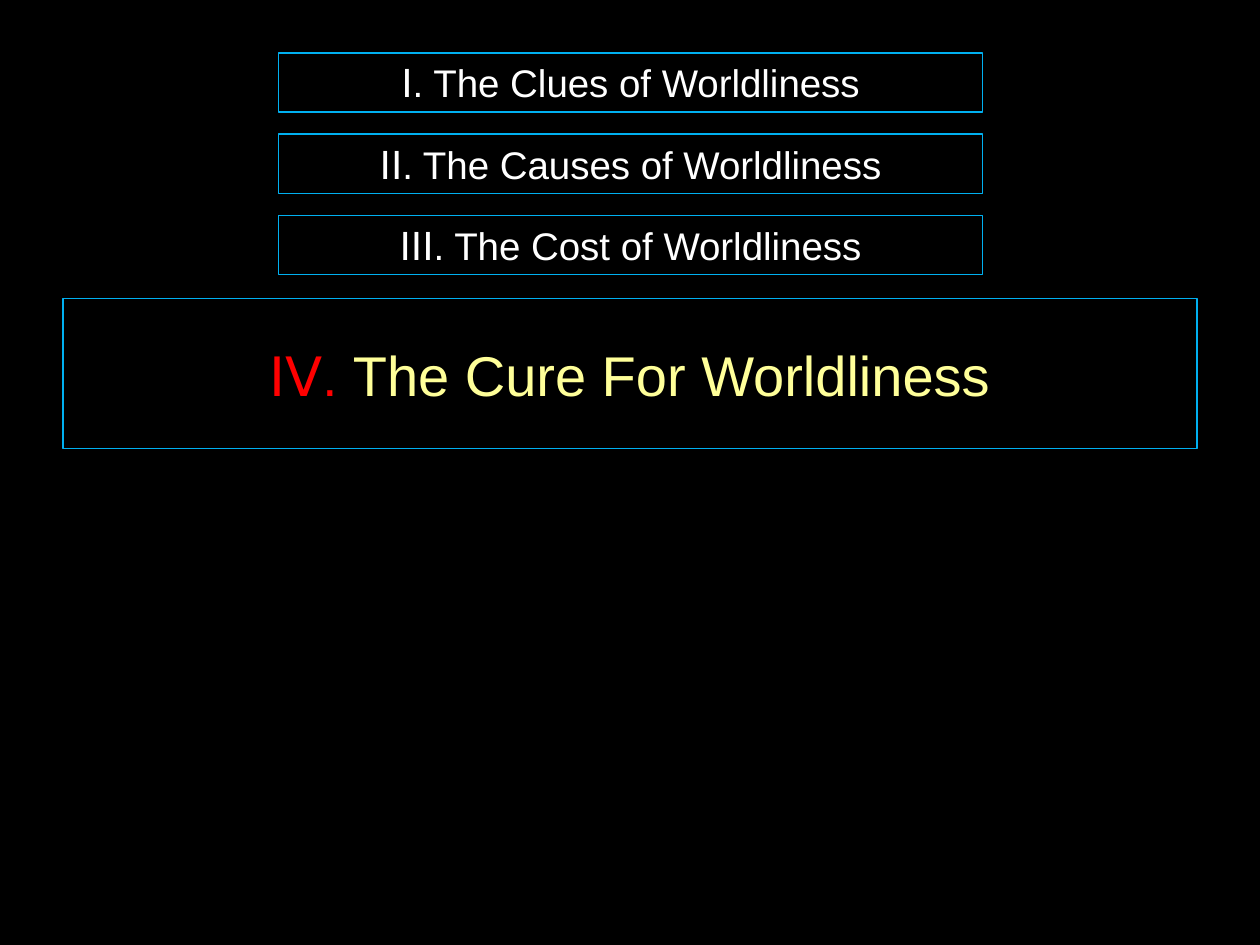
from pptx import Presentation
from pptx.dml.color import RGBColor
from pptx.enum.shapes import MSO_SHAPE
from pptx.enum.text import MSO_ANCHOR, PP_ALIGN
from pptx.util import Inches, Pt

BLACK = RGBColor(0x00, 0x00, 0x00)
WHITE = RGBColor(0xFF, 0xFF, 0xFF)
RED = RGBColor(0xFF, 0x00, 0x00)
YELLOW = RGBColor(0xFF, 0xFF, 0x99)
BLUE = RGBColor(0x00, 0xB0, 0xF0)

NUMERAL_FONT = "DejaVu Sans"
TITLE_FONT = "Arial"

EARLIER_POINTS = [
    ("I", ". The Clues of Worldliness"),
    ("II", ". The Causes of Worldliness"),
    ("III", ". The Cost of Worldliness"),
]
POINT_PITCH = 0.645


def add_point(slide, left, top, width, height, runs):
    """Outlined box with centred text; runs are (text, size, font, colour)."""
    box = slide.shapes.add_shape(
        MSO_SHAPE.RECTANGLE, Inches(left), Inches(top), Inches(width), Inches(height)
    )
    box.shadow.inherit = False
    box.fill.background()
    box.line.color.rgb = BLUE
    box.line.width = Pt(0.75)

    frame = box.text_frame
    frame.word_wrap = True
    frame.vertical_anchor = MSO_ANCHOR.MIDDLE
    paragraph = frame.paragraphs[0]
    paragraph.alignment = PP_ALIGN.CENTER
    for text, size, font, colour in runs:
        run = paragraph.add_run()
        run.text = text
        run.font.size = Pt(size)
        run.font.name = font
        run.font.color.rgb = colour


def add_earlier_points(slide, left, top, width, height):
    for index, (numeral, title) in enumerate(EARLIER_POINTS):
        add_point(slide, left, top + index * POINT_PITCH, width, height, [
            (numeral, 22, NUMERAL_FONT, WHITE),
            (title, 22, TITLE_FONT, WHITE),
        ])


def add_current_point(slide, left, top, width, height):
    add_point(slide, left, top, width, height, [
        ("IV", 31, NUMERAL_FONT, RED),
        (".", 31, TITLE_FONT, RED),
        (" ", 32, TITLE_FONT, RED),
        ("The Cure For Worldliness", 32, TITLE_FONT, YELLOW),
    ])


def main():
    deck = Presentation()
    deck.slide_width = Inches(10)
    deck.slide_height = Inches(7.5)
    slide = deck.slides.add_slide(deck.slide_layouts[6])
    background = slide.background.fill
    background.solid()
    background.fore_color.rgb = BLACK

    add_earlier_points(slide, 2.21, 0.42, 5.59, 0.47)
    add_current_point(slide, 0.5, 2.37, 9, 1.19)
    deck.save("out.pptx")


if __name__ == "__main__":
    main()
